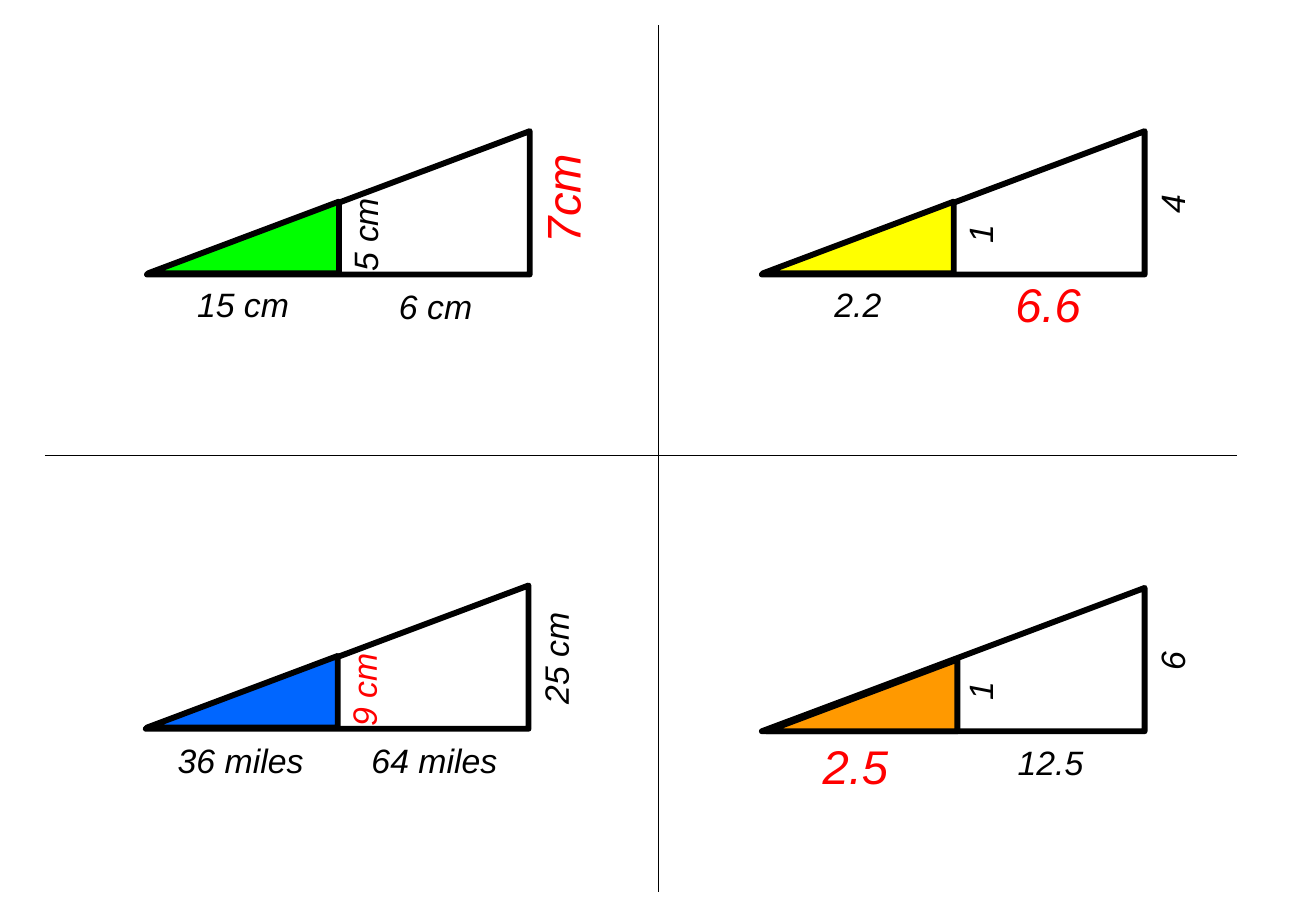
"""Build a slide with four similar-triangle problems and their answers."""
import pptx
import pptx.dml.color
import pptx.enum.shapes
import pptx.enum.text
import pptx.util
import lxml.etree

SLIDE_WIDTH = pptx.util.Inches(10.83)
SLIDE_HEIGHT = pptx.util.Inches(7.5)
COLUMNS, ROWS = 1083, 750
BLACK, RED = "000000", "FF0000"
LARGE_SIZE = (315, 118)
SMALL_SIZE = (157, 59)
LABEL_WIDTH = 125
LABEL_HEIGHTS = {20: 44, 28: 57}
LABEL_SPOTS = {
    "near base": (79, 143, 0),
    "far base": (237.5, 144, 0),
    "inner height": (179.5, 85, 270),
    "outer height": (337.5, 60, 270),
}
PROBLEMS = [
    ((121, 108), (1, 58), "00FF00", {
        "near base": ("15 cm", 20, BLACK), "far base": ("6 cm", 20, BLACK),
        "inner height": ("5 cm", 20, BLACK),
        "outer height": ("7cm", 28, RED, 4, -4.5)}),
    ((627, 108), (1, 58), "FFFF00", {
        "near base": ("2.2", 20, BLACK),
        "far base": ("6.6", 28, RED, -2, -1.5),
        "inner height": ("1", 20, BLACK), "outer height": ("4", 20, BLACK)}),
    ((120, 482), (1, 58), "0066FF", {
        "near base": ("36 miles", 20, BLACK, -1, 1),
        "far base": ("64 miles", 20, BLACK),
        "inner height": ("9 cm", 20, RED, 0, 1),
        "outer height": ("25 cm", 20, BLACK)}),
    ((627, 484), (4, 59), "FF9900", {
        "near base": ("2.5", 28, RED, -2, 3.5),
        "far base": ("12.5", 20, BLACK),
        "inner height": ("1", 20, BLACK), "outer height": ("6", 20, BLACK)}),
]


def across(columns):
    """Return the length of a number of grid columns."""
    return round(SLIDE_WIDTH * columns / COLUMNS)


def down(rows):
    """Return the length of a number of grid rows."""
    return round(SLIDE_HEIGHT * rows / ROWS)


def paint(color_format, color):
    """Apply a hex colour to a fill, line or font colour."""
    color_format.rgb = pptx.dml.color.RGBColor.from_string(color)


def add_triangle(slide, left, top, size, color=None):
    """Add a right triangle with its right angle at the lower right."""
    width, height = size
    triangle = slide.shapes.add_shape(
        pptx.enum.shapes.MSO_SHAPE.RIGHT_TRIANGLE,
        across(left), down(top), across(width), down(height))
    triangle.shadow.inherit = False
    triangle.element.spPr.xfrm.set("flipH", "1")
    if color:
        triangle.fill.solid()
        paint(triangle.fill.fore_color, color)
    else:
        triangle.fill.background()
    triangle.line.width = pptx.util.Pt(3.5)
    paint(triangle.line.color, BLACK)


def add_label(slide, center_x, center_y, rotation, text, size, color):
    """Add an italic label centred on a grid point."""
    height = LABEL_HEIGHTS[size]
    label = slide.shapes.add_textbox(
        across(center_x - LABEL_WIDTH / 2), down(center_y - height / 2),
        across(LABEL_WIDTH), down(height))
    label.rotation = rotation
    frame = label.text_frame
    frame.word_wrap = True
    frame.auto_size = pptx.enum.text.MSO_AUTO_SIZE.SHAPE_TO_FIT_TEXT
    paragraph = frame.paragraphs[0]
    paragraph.alignment = pptx.enum.text.PP_ALIGN.CENTER
    run = paragraph.add_run()
    run.text = text
    run.font.name = "Arial"
    run.font.size = pptx.util.Pt(size)
    run.font.italic = True
    paint(run.font.color, color)


def add_divider(slide, start, end):
    """Add a thin line between two grid points."""
    divider = slide.shapes.add_connector(
        pptx.enum.shapes.MSO_CONNECTOR.STRAIGHT,
        across(start[0]), down(start[1]), across(end[0]), down(end[1]))
    divider.line.width = pptx.util.Pt(0.5)
    paint(divider.line.color, BLACK)
    lxml.etree.SubElement(
        divider.element.spPr, pptx.oxml.ns.qn("a:effectLst"))


def add_problem(slide, origin, small_offset, color, labels):
    """Add nested triangles with the four lengths around them."""
    left, top = origin
    add_triangle(slide, left, top, LARGE_SIZE)
    add_triangle(slide, left + small_offset[0], top + small_offset[1],
                 SMALL_SIZE, color)
    for spot, (text, size, text_color, *nudge) in labels.items():
        x, y, rotation = LABEL_SPOTS[spot]
        shift_x, shift_y = nudge or (0, 0)
        add_label(slide, left + x + shift_x, top + y + shift_y,
                  rotation, text, size, text_color)


def main():
    """Build and save the presentation."""
    presentation = pptx.Presentation()
    presentation.slide_width = SLIDE_WIDTH
    presentation.slide_height = SLIDE_HEIGHT
    slide = presentation.slides.add_slide(presentation.slide_layouts[6])
    for problem in PROBLEMS:
        add_problem(slide, *problem)
    add_divider(slide, (542, 21), (542, 734))
    add_divider(slide, (37, 375), (1018, 375))
    presentation.save("out.pptx")


if __name__ == "__main__":
    main()
